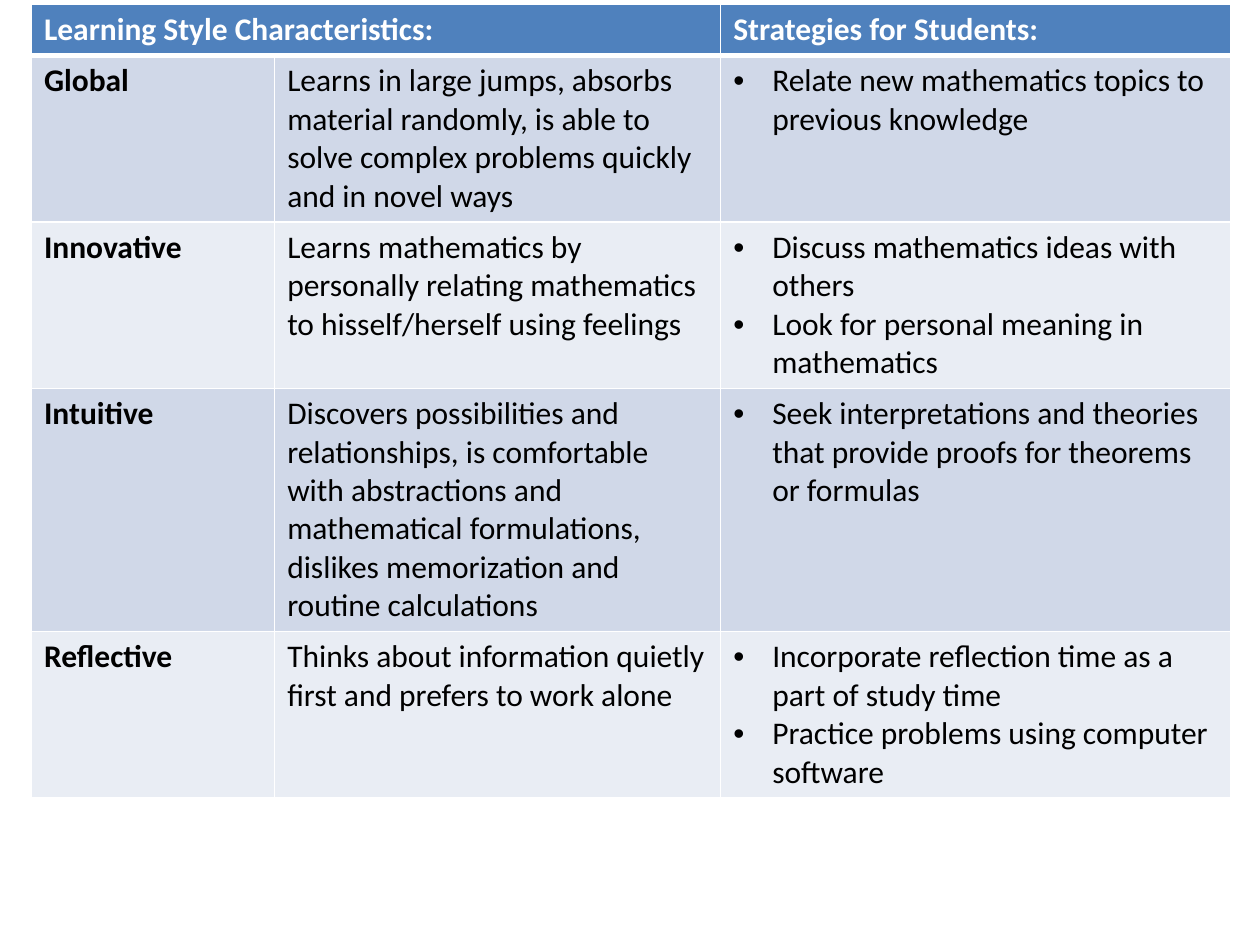
from dataclasses import dataclass

from lxml.etree import SubElement
from pptx import Presentation
from pptx.dml.color import RGBColor as RGB
from pptx.oxml.ns import qn
from pptx.util import Inches, Pt


@dataclass(frozen=True)
class Theme:
    font: str = "Calibri"
    size: int = 18
    text: str = "000000"
    header_text: str = "FFFFFF"
    header_fill: str = "4F81BD"
    bands: tuple[str, str] = ("D0D8E8", "E9EDF4")
    border: str = "FFFFFF"
    thin: int = 1
    thick: int = 3


@dataclass(frozen=True)
class LearningStyle:
    name: str
    traits: str
    strategies: tuple[str, ...]


THEME = Theme()
COLUMN_WIDTHS = (1.93, 3.54, 4.05)
ROW_HEIGHT = 0.41  # minimum; rows grow with their text
BULLET_INDENT = Inches(0.31)

STYLES = (
    LearningStyle(
        "Global",
        "Learns in large jumps, absorbs material randomly, is able to solve "
        "complex problems quickly and in novel ways",
        ("Relate new mathematics topics to previous knowledge",),
    ),
    LearningStyle(
        "Innovative",
        "Learns mathematics by personally relating mathematics to "
        "hisself/herself using feelings",
        ("Discuss mathematics ideas with others",
         "Look for personal meaning in mathematics"),
    ),
    LearningStyle(
        "Intuitive",
        "Discovers possibilities and relationships, is comfortable with "
        "abstractions and mathematical formulations, dislikes memorization "
        "and routine calculations",
        ("Seek interpretations and theories that provide proofs for theorems "
         "or formulas",),
    ),
    LearningStyle(
        "Reflective",
        "Thinks about information quietly first and prefers to work alone",
        ("Incorporate reflection time as a part of study time",
         "Practice problems using computer software"),
    ),
)


def write_text(frame, *lines: str, color: str = THEME.text,
               bold: bool = False, bullet: bool = False) -> None:
    """Write one paragraph per line in the theme's type."""
    for number, line in enumerate(lines):
        paragraph = frame.add_paragraph() if number else frame.paragraphs[0]
        run = paragraph.add_run()
        run.text = line
        run.font.name = THEME.font
        run.font.size = Pt(THEME.size)
        run.font.bold = bold
        run.font.color.rgb = RGB.from_string(color)
        if bullet:
            properties = paragraph._p.get_or_add_pPr()
            properties.set("marL", str(BULLET_INDENT))
            properties.set("indent", str(-BULLET_INDENT))
            SubElement(properties, qn("a:buFont"), typeface="Arial")
            SubElement(properties, qn("a:buChar"), char="•")


def style_cell(cell, fill: str, top: int = THEME.thin,
               bottom: int = THEME.thin) -> None:
    """Fill a cell and draw its four borders, widths in points."""
    cell.fill.solid()
    cell.fill.fore_color.rgb = RGB.from_string(fill)
    properties = cell._tc.get_or_add_tcPr()
    sides = {"L": THEME.thin, "R": THEME.thin, "T": top, "B": bottom}
    for position, (side, width) in enumerate(sides.items()):
        line = SubElement(properties, qn(f"a:ln{side}"), w=str(Pt(width)))
        solid = SubElement(line, qn("a:solidFill"))
        SubElement(solid, qn("a:srgbClr"), val=THEME.border)
        properties.insert(position, line)  # borders precede the fill


def add_style_table(slide, styles: tuple[LearningStyle, ...]) -> None:
    height = Inches(6.21)
    frame = slide.shapes.add_table(
        len(styles) + 1, len(COLUMN_WIDTHS), Inches(0.25), Inches(0.03),
        Inches(sum(COLUMN_WIDTHS)), height)
    table = frame.table
    for column, width in zip(table.columns, COLUMN_WIDTHS):
        column.width = Inches(width)
    for row in table.rows:
        row.height = Inches(ROW_HEIGHT)
    frame.height = height

    # Header row
    for cell in table.rows[0].cells:
        style_cell(cell, THEME.header_fill, bottom=THEME.thick)
    table.cell(0, 0).merge(table.cell(0, 1))
    for column, heading in ((0, "Learning Style Characteristics:"),
                            (2, "Strategies for Students:")):
        write_text(table.cell(0, column).text_frame, heading,
                   color=THEME.header_text, bold=True)

    # One banded row per learning style
    for number, style in enumerate(styles):
        cells = list(table.rows[number + 1].cells)
        for cell in cells:
            style_cell(cell, THEME.bands[number % 2],
                       top=THEME.thin if number else THEME.thick)
        name, traits, strategies = (cell.text_frame for cell in cells)
        write_text(name, style.name, bold=True)
        write_text(traits, style.traits)
        write_text(strategies, *style.strategies, bullet=True)


def main() -> None:
    presentation = Presentation()
    presentation.slide_width = Inches(10)
    presentation.slide_height = Inches(7.5)
    slide = presentation.slides.add_slide(presentation.slide_layouts[6])
    add_style_table(slide, STYLES)
    presentation.save("out.pptx")


if __name__ == "__main__":
    main()
